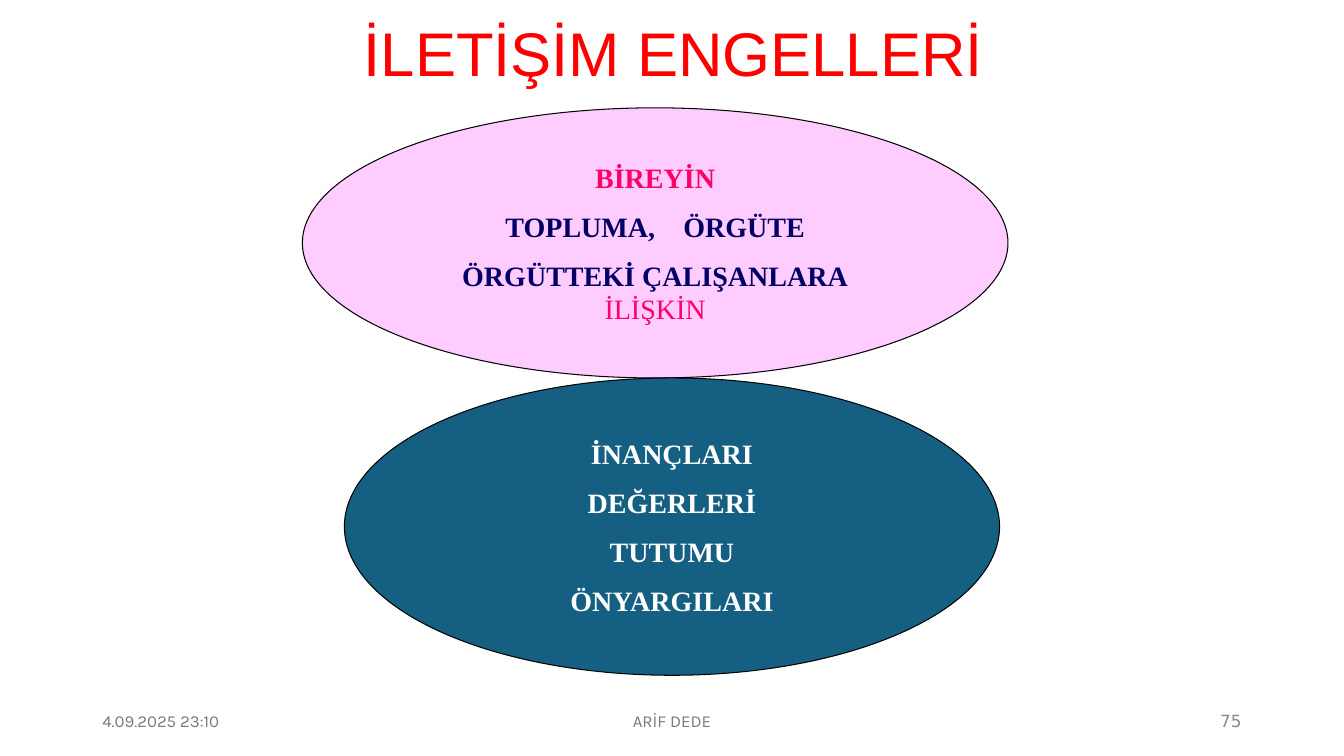
from dataclasses import dataclass

from pptx import Presentation
from pptx.dml.color import RGBColor
from pptx.enum.shapes import MSO_SHAPE
from pptx.enum.text import MSO_ANCHOR, MSO_AUTO_SIZE, PP_ALIGN
from pptx.slide import Slide
from pptx.text.text import TextFrame, _Paragraph
from pptx.util import Inches, Pt

RED = RGBColor(0xFF, 0x00, 0x00)
BLACK = RGBColor(0x00, 0x00, 0x00)
WHITE = RGBColor(0xFF, 0xFF, 0xFF)
PINK = RGBColor(0xFF, 0xCC, 0xFF)
ROSE = RGBColor(0xFF, 0x00, 0x66)
NAVY = RGBColor(0x00, 0x00, 0x66)
TEAL = RGBColor(0x15, 0x60, 0x82)
GREY = RGBColor(0x79, 0x79, 0x79)
LIGHT_GREY = RGBColor(0x89, 0x89, 0x89)

WIDTH, HEIGHT = Inches(13.33), Inches(7.5)
COLUMN, ROW = WIDTH / 160, HEIGHT / 100
SERIF = "Times New Roman"
LINE_GAP = Pt(11)
WORD_GAP = Pt(15)


@dataclass(frozen=True)
class Area:
    """A place on the grid, in columns and rows."""
    column: float
    row: float
    columns: float
    rows: float

    def lengths(self) -> tuple[int, int, int, int]:
        return (round(self.column * COLUMN), round(self.row * ROW),
                round(self.columns * COLUMN), round(self.rows * ROW))


@dataclass(frozen=True)
class Span:
    text: str
    color: RGBColor
    size: int = 20
    font: str = SERIF
    bold: bool = True
    tracking: int = 0


@dataclass(frozen=True)
class Line:
    spans: tuple[Span, ...]
    space_before: int = LINE_GAP


@dataclass(frozen=True)
class Oval:
    area: Area
    fill: RGBColor
    lines: tuple[Line, ...]


@dataclass(frozen=True)
class FooterItem:
    area: Area
    span: Span
    align: PP_ALIGN


TITLE_AREA = Area(18, 4, 124.44, 7.07)
TITLE = Span("İLETİŞİM ENGELLERİ", RED, 44, "Arial", False)

OVALS = (
    Oval(Area(36, 14.27, 84, 35.73), PINK, (
        Line((Span("BİREYİN", ROSE),)),
        Line((Span("TOPLUMA,", NAVY),
              Span(" ", NAVY, tracking=WORD_GAP),
              Span("ÖRGÜTE", NAVY))),
        Line((Span("ÖRGÜTTEKİ ÇALIŞANLARA", NAVY),)),
        Line((Span("İLİŞKİN", ROSE, bold=False),), 0),
    )),
    Oval(Area(41, 50, 78, 39.33), TEAL, tuple(
        Line((Span(word, WHITE),))
        for word in ("İNANÇLARI", "DEĞERLERİ", "TUTUMU", "ÖNYARGILARI")
    )),
)

FOOTER = (
    FooterItem(Area(11, 92.67, 36, 5.33),
               Span("4.09.2025 23:10", GREY, 12, "Karla", False), PP_ALIGN.LEFT),
    FooterItem(Area(53, 92.67, 54, 5.33),
               Span("ARİF DEDE", GREY, 12, "Karla", False), PP_ALIGN.CENTER),
    FooterItem(Area(113, 92.67, 36, 5.33),
               Span("75", LIGHT_GREY, 12, "DejaVu Sans", False), PP_ALIGN.RIGHT),
)


def add_span(para: _Paragraph, span: Span) -> None:
    run = para.add_run()
    run.text = span.text
    run.font.name = span.font
    run.font.size = Pt(span.size)
    run.font.bold = span.bold
    run.font.color.rgb = span.color
    if span.tracking:
        run.font._element.set("spc", str(round(Pt(1) and span.tracking / Pt(1) * 100)))


def prepare_frame(frame: TextFrame, wrap: bool) -> None:
    frame.auto_size = MSO_AUTO_SIZE.NONE
    frame.word_wrap = wrap
    frame.vertical_anchor = MSO_ANCHOR.MIDDLE


def add_title(page: Slide) -> None:
    box = page.shapes.title
    box.left, box.top, box.width, box.height = TITLE_AREA.lengths()
    prepare_frame(box.text_frame, True)
    para = box.text_frame.paragraphs[0]
    para.alignment = PP_ALIGN.CENTER
    para.line_spacing = 0.9
    add_span(para, TITLE)


def add_oval(page: Slide, oval: Oval) -> None:
    shape = page.shapes.add_shape(MSO_SHAPE.OVAL, *oval.area.lengths())
    shape.shadow.inherit = False
    shape.fill.solid()
    shape.fill.fore_color.rgb = oval.fill
    shape.line.color.rgb = BLACK
    shape.line.width = Pt(0.75)
    frame = shape.text_frame
    prepare_frame(frame, False)
    for index, line in enumerate(oval.lines):
        para = frame.add_paragraph() if index else frame.paragraphs[0]
        para.alignment = PP_ALIGN.CENTER
        para.space_before = line.space_before
        for span in line.spans:
            add_span(para, span)


def add_footer_item(page: Slide, item: FooterItem) -> None:
    box = page.shapes.add_textbox(*item.area.lengths())
    prepare_frame(box.text_frame, True)
    para = box.text_frame.paragraphs[0]
    para.alignment = item.align
    add_span(para, item.span)


def main() -> None:
    deck = Presentation()
    deck.slide_width, deck.slide_height = WIDTH, HEIGHT
    page = deck.slides.add_slide(deck.slide_layouts.get_by_name("Title Only"))
    for item in FOOTER:
        add_footer_item(page, item)
    for oval in OVALS:
        add_oval(page, oval)
    add_title(page)
    deck.save("out.pptx")


if __name__ == "__main__":
    main()
